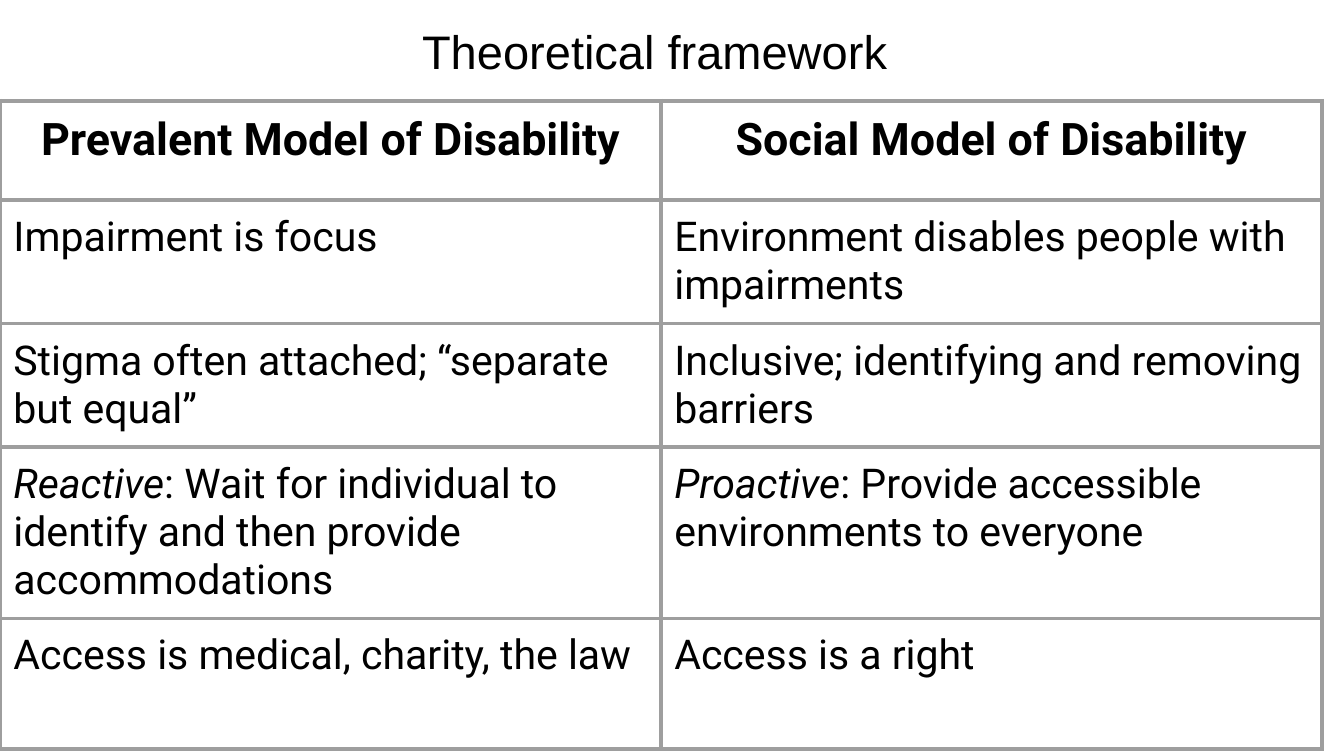
from dataclasses import dataclass

from lxml.etree import SubElement
from pptx import Presentation
from pptx.dml.color import RGBColor as Color
from pptx.enum.text import MSO_ANCHOR as Anchor, PP_ALIGN as Align
from pptx.oxml.ns import qn
from pptx.util import Inches, Pt


@dataclass(frozen=True)
class Theme:
    ink: str = "000000"
    paper: str = "FFFFFF"
    rule: str = "9E9E9E"
    rule_width: float = 2.25
    title_font: str = "Arial"
    table_font: str = "Roboto"
    title_size: float = 25.2
    heading_size: float = 24
    body_size: float = 22
    inset: float = 0.1


GRID_COLUMNS = 40
GRID_ROWS = 22.5
MODELS = [
    ("Prevalent Model of Disability", "Social Model of Disability"),
    ("Impairment is focus", "Environment disables people with impairments"),
    ("Stigma often attached; “separate but equal”",
     "Inclusive; identifying and removing barriers"),
    (("Reactive", ": Wait for individual to identify and then provide accommodations"),
     ("Proactive", ": Provide accessible environments to everyone")),
    ("Access is medical, charity, the law", "Access is a right"),
]
ROW_SPANS = [2.96, 3.56, 3.56, 4.96, 3.88]


def add_text(para, text, font, size, color, bold=False, italic=False):
    span = para.add_run()
    span.text = text
    span.font.name = font
    span.font.size = Pt(size)
    span.font.color.rgb = Color.from_string(color)
    span.font.bold = bold
    span.font.italic = italic


class SlideBuilder:
    def __init__(self, deck, theme):
        self.theme = theme
        self.column = deck.slide_width / GRID_COLUMNS
        self.row = deck.slide_height / GRID_ROWS
        self.slide = deck.slides.add_slide(deck.slide_layouts[5])
        fill = self.slide.background.fill
        fill.solid()
        fill.fore_color.rgb = Color.from_string(theme.paper)

    def place(self, left, top, width, height):
        return (round(left * self.column), round(top * self.row),
                round(width * self.column), round(height * self.row))

    def set_insets(self, holder):
        for side in ("left", "top", "right", "bottom"):
            setattr(holder, f"margin_{side}", Inches(self.theme.inset))

    def title(self, text, *area):
        box = self.slide.shapes.title
        box.left, box.top, box.width, box.height = self.place(*area)
        frame = box.text_frame
        frame.word_wrap = True
        frame.vertical_anchor = Anchor.MIDDLE
        self.set_insets(frame)
        para = frame.paragraphs[0]
        para.alignment = Align.CENTER
        add_text(para, text, self.theme.title_font, self.theme.title_size, self.theme.ink)

    def border(self, cell):
        properties = cell._tc.get_or_add_tcPr()
        for position, side in enumerate(("lnL", "lnR", "lnT", "lnB")):
            line = SubElement(properties, qn(f"a:{side}"), w=str(Pt(self.theme.rule_width)))
            SubElement(SubElement(line, qn("a:solidFill")), qn("a:srgbClr"), val=self.theme.rule)
            properties.insert(position, line)

    def cell(self, cell, content, heading):
        theme = self.theme
        cell.fill.background()
        cell.vertical_anchor = Anchor.TOP
        self.set_insets(cell)
        self.border(cell)
        para = cell.text_frame.paragraphs[0]
        para.alignment = Align.CENTER if heading else Align.LEFT
        size = theme.heading_size if heading else theme.body_size
        lead, rest = ("", content) if isinstance(content, str) else content
        if lead:
            add_text(para, lead, theme.table_font, size, theme.ink, italic=True)
        add_text(para, rest, theme.table_font, size, theme.ink, bold=heading)

    def table(self, rows, row_spans, left, top, width):
        area = self.place(left, top, width, sum(row_spans))
        table = self.slide.shapes.add_table(len(rows), len(rows[0]), *area).table
        table.first_row = table.horz_banding = False
        for row, span in zip(table.rows, row_spans):
            row.height = round(span * self.row)
        for row_index, contents in enumerate(rows):
            for column_index, content in enumerate(contents):
                self.cell(table.cell(row_index, column_index), content, row_index == 0)


def main():
    deck = Presentation()
    deck.slide_width = Inches(10)
    deck.slide_height = deck.slide_width * 9 // 16
    builder = SlideBuilder(deck, Theme())
    builder.title("Theoretical framework ", 1.04, 0.26, 37.28, 2.52)
    builder.table(MODELS, ROW_SPANS, 0, 3, 39.34)
    deck.save("out.pptx")


if __name__ == "__main__":
    main()
